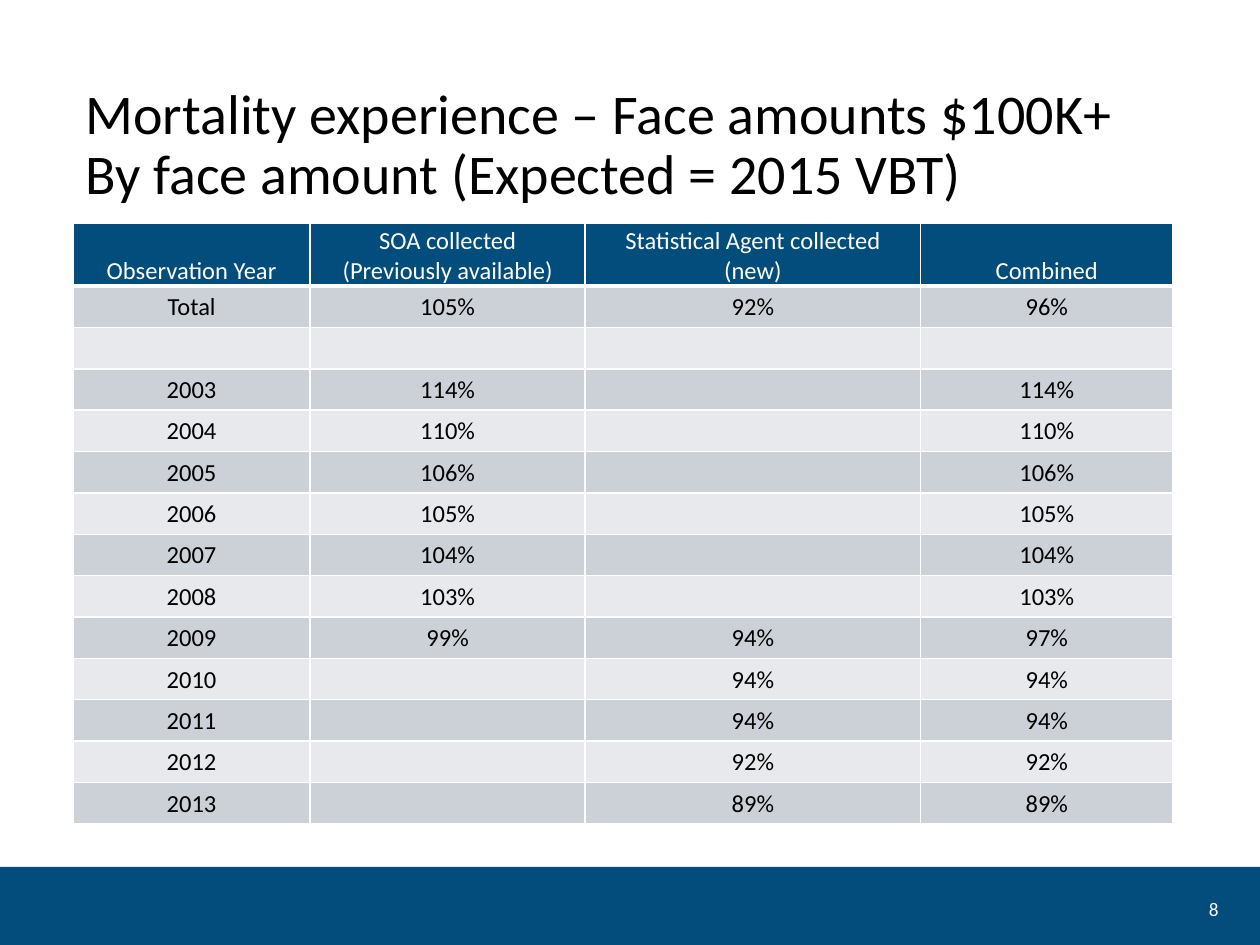
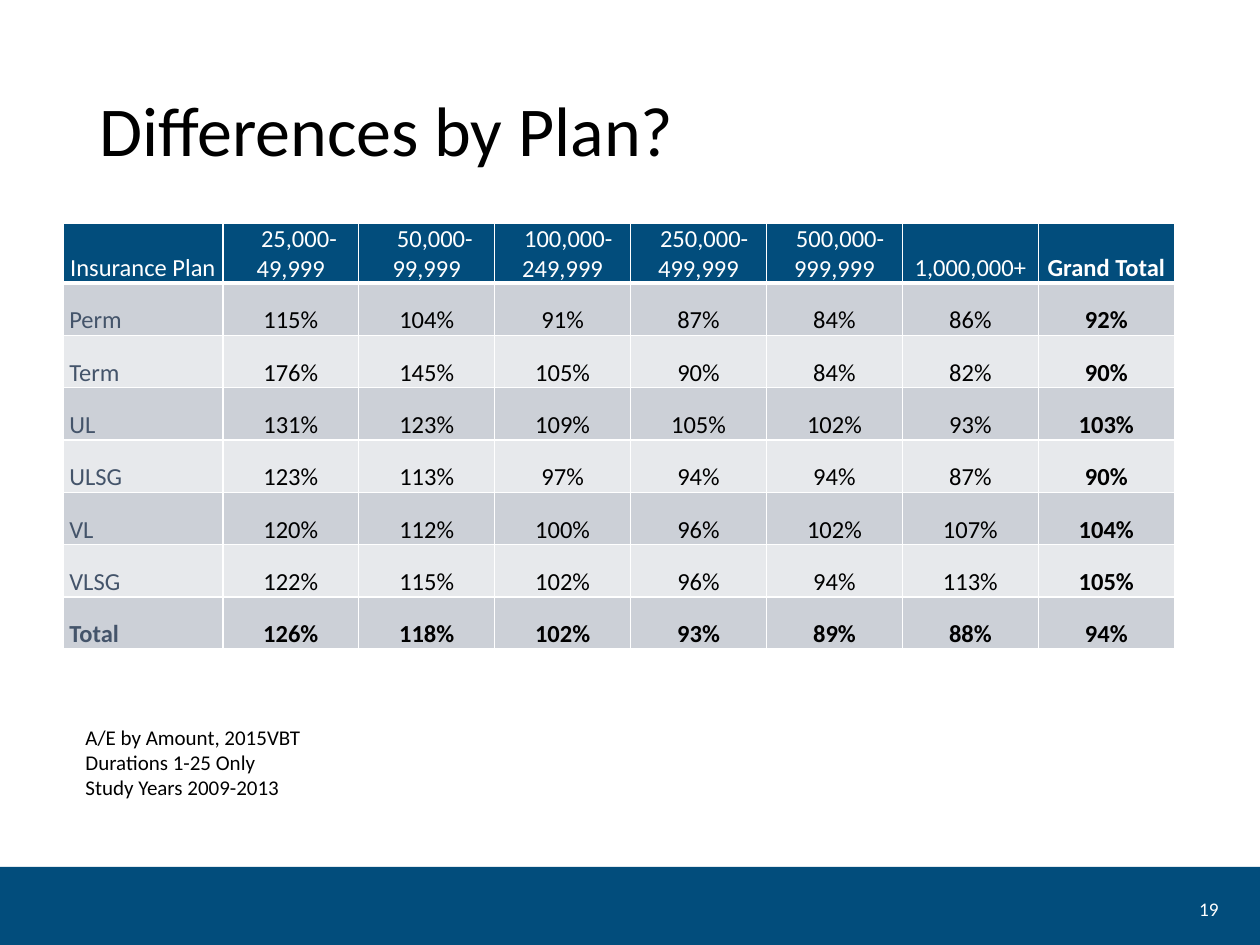
from lxml import etree
from pptx import Presentation
from pptx.dml.color import RGBColor
from pptx.enum.shapes import MSO_SHAPE
from pptx.enum.text import MSO_ANCHOR, MSO_AUTO_SIZE, PP_ALIGN
from pptx.oxml.ns import qn
from pptx.util import Inches, Pt

RECTANGLE = MSO_SHAPE.RECTANGLE
TOP, MIDDLE, BOTTOM = MSO_ANCHOR.TOP, MSO_ANCHOR.MIDDLE, MSO_ANCHOR.BOTTOM
LEFT, CENTER, RIGHT = PP_ALIGN.LEFT, PP_ALIGN.CENTER, PP_ALIGN.RIGHT

NAVY = RGBColor(0x02, 0x4D, 0x7C)
WHITE = RGBColor(0xFF, 0xFF, 0xFF)
BLACK = RGBColor(0, 0, 0)
SLATE = RGBColor(0x44, 0x54, 0x6A)
BANDS = (RGBColor(0xCC, 0xD0, 0xD7), RGBColor(0xE7, 0xE9, 0xEC))

FONT = "Calibri"
CELL_SIZE = 14
SLIDE_WIDTH, SLIDE_HEIGHT = Inches(10), Inches(7.5)

YEAR_COLUMNS = (1.88, 2.18, 2.66, 2)
YEAR_ROWS = [
    ("Observation Year", "SOA collected\n(Previously available)",
     "Statistical Agent collected\n(new)", "Combined"),
    ("Total", "105%", "92%", "96%"),
    ("", "", "", ""),
    ("2003", "114%", "", "114%"),
    ("2004", "110%", "", "110%"),
    ("2005", "106%", "", "106%"),
    ("2006", "105%", "", "105%"),
    ("2007", "104%", "", "104%"),
    ("2008", "103%", "", "103%"),
    ("2009", "99%", "94%", "97%"),
    ("2010", "", "94%", "94%"),
    ("2011", "", "94%", "94%"),
    ("2012", "", "92%", "92%"),
    ("2013", "", "89%", "89%"),
]

PLAN_COLUMNS = (1.27,) + (1.08,) * 7
PLAN_ROWS = [
    ("Insurance Plan", "25,000-49,999", "50,000-99,999", "100,000-249,999",
     "250,000-499,999", "500,000-999,999", "1,000,000+", "Grand Total"),
    ("Perm", "115%", "104%", "91%", "87%", "84%", "86%", "92%"),
    ("Term", "176%", "145%", "105%", "90%", "84%", "82%", "90%"),
    ("UL", "131%", "123%", "109%", "105%", "102%", "93%", "103%"),
    ("ULSG", "123%", "113%", "97%", "94%", "94%", "87%", "90%"),
    ("VL", "120%", "112%", "100%", "96%", "102%", "107%", "104%"),
    ("VLSG", "122%", "115%", "102%", "96%", "94%", "113%", "105%"),
    ("Total", "126%", "118%", "102%", "93%", "89%", "88%", "94%"),
]
PLAN_HEADER_INDENTS = {1: 0.13, 2: 0.13, 3: 0.09, 4: 0.09, 5: 0.09}


def place(left, top, width, height):
    """Turn percentages of the slide's size into lengths."""
    return (int(SLIDE_WIDTH * left / 100), int(SLIDE_HEIGHT * top / 100),
            int(SLIDE_WIDTH * width / 100), int(SLIDE_HEIGHT * height / 100))


def style_para(para, size, color, align=LEFT, bold=False):
    para.alignment = align
    font = para.font
    font.name, font.size, font.bold = FONT, Pt(size), bold
    font.color.rgb = color


def add_text(page, area, lines, size, color=BLACK, align=LEFT, anchor=TOP):
    box = page.shapes.add_textbox(*place(*area))
    frame = box.text_frame
    frame.word_wrap = True
    frame.vertical_anchor = anchor
    for index, line in enumerate(lines):
        para = frame.add_paragraph() if index else frame.paragraphs[0]
        para.text = line
        style_para(para, size, color, align)
    return box


def add_title(page, area, title, size, anchor):
    box = add_text(page, area, [title], size, anchor=anchor)
    box.text_frame.paragraphs[0].line_spacing = 0.9


def add_footer(page, number):
    band = page.shapes.add_shape(RECTANGLE, *place(0, 91.73, 100, 8.67))
    band.shadow.inherit = False
    band.fill.solid()
    band.fill.fore_color.rgb = NAVY
    band.line.fill.background()
    add_text(page, (92.4, 94.75, 5.3, 2.93), [str(number)], 11, WHITE, RIGHT, MIDDLE)


def add_borders(cell, top=1, bottom=1):
    properties = cell._tc.get_or_add_tcPr()
    for side, width in (("L", 1), ("R", 1), ("T", top), ("B", bottom)):
        line = etree.SubElement(properties, qn(f"a:ln{side}"), w=str(Pt(width)))
        fill = etree.SubElement(line, qn("a:solidFill"))
        etree.SubElement(fill, qn("a:srgbClr"), val=str(WHITE))


def fill_cell(cell, text, row):
    """Write one cell; row 0 is the header, set off by a thick rule."""
    add_borders(cell, top=3 if row == 1 else 1, bottom=1 if row else 3)
    cell.fill.solid()
    cell.fill.fore_color.rgb = BANDS[(row - 1) % 2] if row else NAVY
    cell.margin_left = cell.margin_right = cell.margin_top = Inches(0.01)
    cell.margin_bottom = 0
    para = cell.text_frame.paragraphs[0]
    para.text = text
    style_para(para, CELL_SIZE, BLACK if row else WHITE, CENTER)


def add_data_table(page, area, weights, rows, body_anchor):
    left, top, width, height = place(*area)
    table = page.shapes.add_table(len(rows), len(weights), left, top, width, height).table
    properties = table._tbl.tblPr
    for style in list(properties):
        properties.remove(style)
    table.horz_banding = False
    for column, weight in zip(table.columns, weights):
        column.width = int(width * weight / sum(weights))
    for row, texts in enumerate(rows):
        for column, text in enumerate(texts):
            cell = table.cell(row, column)
            fill_cell(cell, text, row)
            cell.vertical_anchor = body_anchor if row else BOTTOM
    return table


def add_year_table(page):
    area = (5.8, 23.6, 87.3, 63.6)
    table = add_data_table(page, area, YEAR_COLUMNS, YEAR_ROWS, MIDDLE)
    header_height = Inches(0.5)
    body_height = (place(*area)[3] - header_height) // (len(YEAR_ROWS) - 1)
    for index, row in enumerate(table.rows):
        row.height = body_height if index else header_height


def add_plan_table(page):
    table = add_data_table(page, (5, 23.6, 88.2, 44.27), PLAN_COLUMNS, PLAN_ROWS, BOTTOM)
    last_row, last_column = len(PLAN_ROWS) - 1, len(PLAN_COLUMNS) - 1
    for column, indent in PLAN_HEADER_INDENTS.items():
        para = table.cell(0, column).text_frame.paragraphs[0]
        para._p.get_or_add_pPr().set("indent", str(Inches(indent)))
    for row in range(1, last_row + 1):
        label = table.cell(row, 0)
        label.margin_left = Inches(0.05)
        style_para(label.text_frame.paragraphs[0], CELL_SIZE, SLATE)
    for row in range(last_row + 1):
        for column in range(last_column + 1):
            if row == last_row or column == last_column:
                table.cell(row, column).text_frame.paragraphs[0].font.bold = True


def add_study_notes(page):
    lines = ["A/E by Amount, 2015VBT", "Durations 1-25 Only", "Study Years 2009-2013"]
    box = add_text(page, (5.8, 76, 86.5, 9.47), lines, 12)
    box.text_frame.auto_size = MSO_AUTO_SIZE.SHAPE_TO_FIT_TEXT


def main():
    deck = Presentation()
    deck.slide_width, deck.slide_height = SLIDE_WIDTH, SLIDE_HEIGHT
    blank = deck.slide_layouts[6]

    experience = deck.slides.add_slide(blank)
    add_footer(experience, 8)
    add_title(experience, (5.8, 4.8, 87.3, 17.73),
              "Mortality experience – Face amounts $100K+\n"
              "By face amount (Expected = 2015 VBT)", 32, BOTTOM)
    add_year_table(experience)

    plans = deck.slides.add_slide(blank)
    add_footer(plans, 19)
    add_title(plans, (6.9, 4.8, 86.2, 18.67), "Differences by Plan?", 40, MIDDLE)
    add_plan_table(plans)
    add_study_notes(plans)

    deck.save("out.pptx")


if __name__ == "__main__":
    main()
